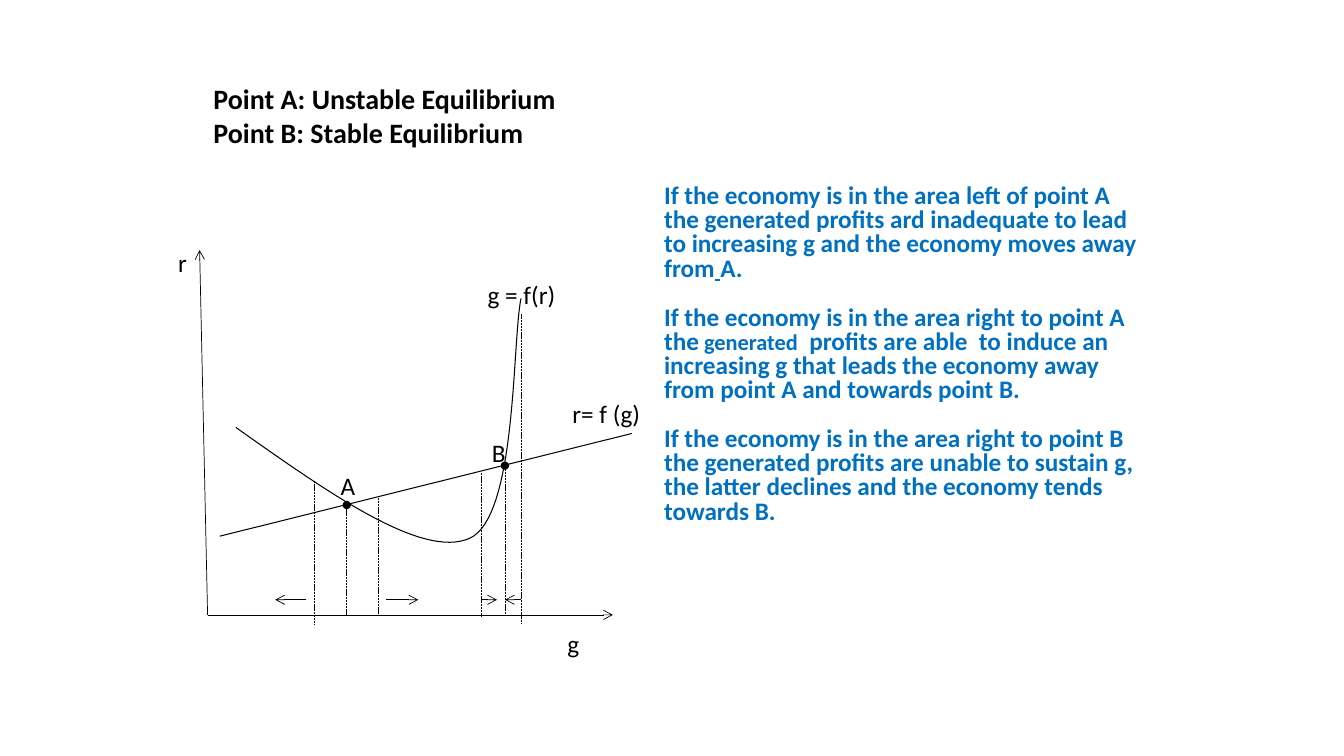
from dataclasses import dataclass
from typing import Optional

import lxml.etree
import pptx
import pptx.dml.color
import pptx.enum.dml
import pptx.enum.shapes
import pptx.enum.text
import pptx.oxml
import pptx.oxml.ns
import pptx.util

Pt = pptx.util.Pt
COLORS = {"ink": "000000", "comment": "0070C0"}
FONT = "Calibri"
GROUND_Y = 439.9
BELOW_GROUND_Y = 445.7
MOTION_Y = 428.4
CURVE_STEPS = 32


@dataclass(frozen=True)
class Segment:
    start: tuple[float, float]
    end: tuple[float, float]
    weight: float = 0.5
    dashed: bool = False
    head: Optional[str] = None
    tail: Optional[str] = None


@dataclass(frozen=True)
class Run:
    text: str
    size: float = 18
    underline: bool = False


@dataclass(frozen=True)
class Label:
    text: str
    left: float
    top: float
    width: float


def drop(x: float, top: float, bottom: float = GROUND_Y, head: Optional[str] = None) -> Segment:
    return Segment((x, top), (x, bottom), dashed=True, head=head)


def motion(start_x: float, end_x: float) -> Segment:
    return Segment((start_x, MOTION_Y), (end_x, MOTION_Y), tail="arrow")


SEGMENTS = [
    Segment((157, 383), (451.4, 309.6), weight=0.75),
    Segment((148.3, 439.2), (142.6, 178.6), tail="arrow"),
    Segment((148.3, 439.2), (437.8, 439.2), tail="arrow"),
    drop(247.7, 360.7, head="oval"),
    drop(360.7, 332.6, head="oval"),
    drop(224.6, 343.4, BELOW_GROUND_Y),
    drop(270, 355.7),
    drop(344.2, 337.7),
    drop(372.2, 224.6, BELOW_GROUND_Y),
    motion(218.9, 196.6),
    motion(275.8, 298.8),
    motion(344.2, 355),
    motion(372.2, 360.7),
]

GROWTH_CURVE = [
    ((168.5, 305.3), (234.7, 352.1), (301.7, 399.6), (335.5, 384.5)),
    ((335.5, 384.5), (369.4, 369.4), (365.8, 244.1), (372.2, 213.1)),
]

LABELS = [
    Label("r= f (g)", 401.8, 280.8, 64.1),
    Label("g = f(r)", 341.3, 195.8, 63.4),
    Label("r", 120.2, 172.8, 20.9),
    Label("g", 398.2, 445, 23),
    Label("Α", 236.2, 332.6, 25.2),
    Label("Β", 344.2, 308.9, 25.2),
]

HEADING = [
    [Run("Point A: Unstable Equilibrium", 20)],
    [Run("Point B: Stable Equilibrium", 20)],
]

COMMENTARY = [
    [
        Run("If the economy is in the area left of point A the generated profits ard "
            "inadequate to lead to increasing g and the economy moves away from"),
        Run(" ", underline=True),
        Run("A."),
    ],
    [
        Run("If the economy is in the area right to point A the"),
        Run(" generated", 16),
        Run("  profits are able  to induce an increasing g that leads the economy "
            "away from point A and towards point B."),
    ],
    [
        Run("If the economy is in the area right to point B the generated profits are "
            "unable to sustain g, the latter declines and the economy tends towards B."),
    ],
]


def rgb(name: str) -> pptx.dml.color.RGBColor:
    return pptx.dml.color.RGBColor.from_string(COLORS[name])


def write_text(slide, paragraphs: list[list[Run]], left: float, top: float, width: float,
               height: float, *, color: str = "ink", bold: bool = False,
               line_spacing: float = 1.0, gap: float = 0, inset_top: float = 3.6) -> None:
    frame = slide.shapes.add_textbox(Pt(left), Pt(top), Pt(width), Pt(height)).text_frame
    frame.word_wrap = True
    frame.margin_top = Pt(inset_top)
    for index, runs in enumerate(paragraphs):
        paragraph = frame.add_paragraph() if index else frame.paragraphs[0]
        paragraph.line_spacing = line_spacing
        paragraph.space_before = Pt(gap if index else 0)
        for piece in runs:
            run = paragraph.add_run()
            run.text = piece.text
            run.font.name = FONT
            run.font.size = Pt(piece.size)
            run.font.bold = bold
            run.font.underline = piece.underline
            run.font.color.rgb = rgb(color)


def draw_segment(slide, segment: Segment) -> None:
    connector = slide.shapes.add_connector(
        pptx.enum.shapes.MSO_CONNECTOR.STRAIGHT,
        *(Pt(value) for value in segment.start + segment.end))
    connector.line.color.rgb = rgb("ink")
    connector.line.width = Pt(segment.weight)
    if segment.dashed:
        connector.line.dash_style = pptx.enum.dml.MSO_LINE.SQUARE_DOT
    outline = connector.line._get_or_add_ln()
    for tag, ending in (("a:headEnd", segment.head), ("a:tailEnd", segment.tail)):
        if ending:
            lxml.etree.SubElement(outline, pptx.oxml.ns.qn(tag), type=ending)
    lxml.etree.SubElement(connector._element.spPr, pptx.oxml.ns.qn("a:effectLst"))


def bezier_point(controls: tuple, t: float) -> tuple[int, int]:
    weights = ((1 - t) ** 3, 3 * t * (1 - t) ** 2, 3 * t ** 2 * (1 - t), t ** 3)
    x, y = (sum(w * c for w, c in zip(weights, axis)) for axis in zip(*controls))
    return Pt(x), Pt(y)


def draw_curve(slide, pieces: list[tuple]) -> None:
    points = [bezier_point(piece, step / CURVE_STEPS)
              for piece in pieces for step in range(1, CURVE_STEPS + 1)]
    builder = slide.shapes.build_freeform(*bezier_point(pieces[0], 0))
    builder.add_line_segments(points, close=False)
    curve = builder.convert_to_shape()
    curve.shadow.inherit = False
    curve.fill.background()
    curve.line.color.rgb = rgb("ink")
    curve.line.width = Pt(0.75)


def main() -> None:
    presentation = pptx.Presentation()
    presentation.slide_width = Pt(960)
    presentation.slide_height = Pt(540)
    slide = presentation.slides.add_slide(presentation.slide_layouts[6])

    draw_curve(slide, GROWTH_CURVE)
    for segment in SEGMENTS:
        draw_segment(slide, segment)
    for label in LABELS:
        write_text(slide, [[Run(label.text)]], label.left, label.top, label.width, 28.8)
    write_text(slide, HEADING, 145.4, 54.7, 317.5, 94.3, bold=True)
    write_text(slide, COMMENTARY, 467.3, 85.7, 357.1, 454.3, color="comment", bold=True,
               line_spacing=0.8, gap=17.6, inset_top=46.6)

    presentation.save("out.pptx")


if __name__ == "__main__":
    main()
